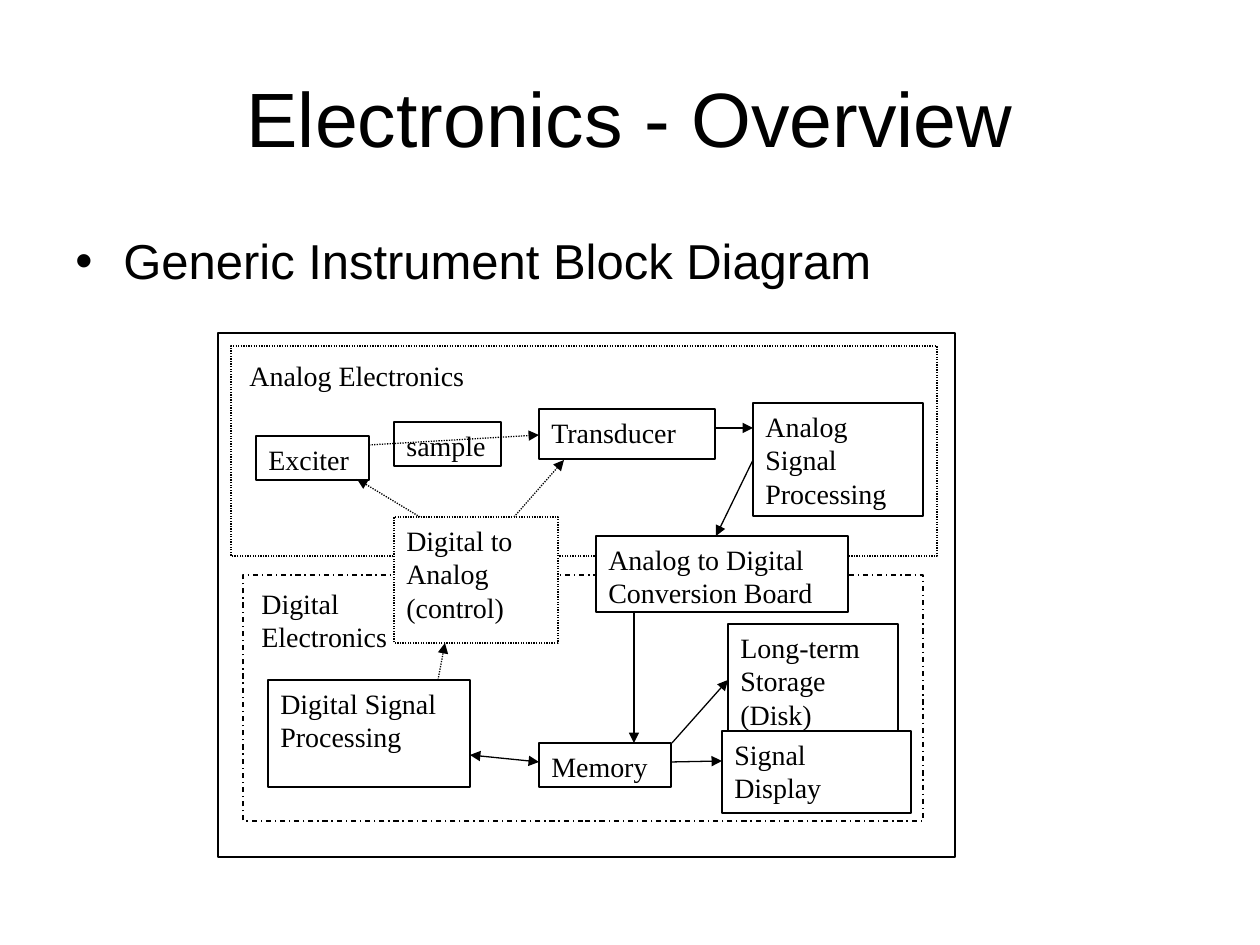
from lxml.etree import SubElement
from pptx import Presentation
from pptx.dml.color import RGBColor
from pptx.enum.dml import MSO_LINE_DASH_STYLE as Dash
from pptx.enum.shapes import MSO_CONNECTOR, MSO_SHAPE
from pptx.enum.text import MSO_ANCHOR, PP_ALIGN
from pptx.oxml.ns import qn
from pptx.util import Emu, Pt

BLACK = RGBColor(0, 0, 0)
WHITE = RGBColor(255, 255, 255)
SOLID, DOTTED, DASH_DOT = Dash.SOLID, Dash.ROUND_DOT, Dash.DASH_DOT

# left, top, width, height, text, outline style (None for no outline)
BLOCKS = [
    (0, 0, 737, 524, "", SOLID),
    (13, 13, 706, 210, "", DOTTED),
    (19, 19, 271, 52, "Analog Electronics", None),
    (321, 76, 176, 50, "Transducer", SOLID),
    (535, 70, 170, 113, "Analog Signal Processing", SOLID),
    (25, 242, 680, 246, "", DASH_DOT),
    (31, 247, 183, 82, "Digital Electronics", None),
    (378, 203, 252, 76, "Analog to Digital Conversion Board", SOLID),
    (321, 410, 132, 44, "Memory", SOLID),
    (504, 398, 189, 82, "Signal Display", SOLID),
    (510, 291, 170, 107, "Long-term Storage (Disk)", SOLID),
    (50, 347, 202, 107, "Digital Signal Processing", SOLID),
    (38, 103, 113, 44, "Exciter", SOLID),
    (176, 89, 107, 44, "sample", SOLID),
    (176, 184, 164, 126, "Digital to Analog (control)", DOTTED),
]

# start x, start y, end x, end y, line style, arrowheads
ARROWS = [
    (498, 95, 535, 95, SOLID, ["tailEnd"]),
    (535, 127, 498, 203, SOLID, ["tailEnd"]),
    (416, 278, 416, 410, SOLID, ["tailEnd"]),
    (454, 410, 510, 347, SOLID, ["tailEnd"]),
    (454, 429, 504, 428, SOLID, ["tailEnd"]),
    (252, 422, 321, 429, SOLID, ["headEnd", "tailEnd"]),
    (151, 112, 321, 102, DOTTED, ["tailEnd"]),
    (220, 347, 227, 310, DOTTED, ["tailEnd"]),
    (202, 184, 139, 146, DOTTED, ["tailEnd"]),
    (296, 184, 346, 127, DOTTED, ["tailEnd"]),
]


def px(length):
    return Emu(round(length * 914400 / 126))


def style_line(line, dash):
    line.color.rgb = BLACK
    line.width = Pt(0.75)
    if dash != SOLID:
        line.dash_style = dash


def write(frame, text, size, font):
    """Put one black paragraph in the frame and return it."""
    frame.word_wrap = True
    para = frame.paragraphs[0]
    para.text = text
    for span in para.runs:
        span.font.size = Pt(size)
        span.font.name = font
        span.font.color.rgb = BLACK
    return para


def add_title(page, left, top, width, height):
    box = page.shapes.add_textbox(px(left), px(top), px(width), px(height))
    box.text_frame.vertical_anchor = MSO_ANCHOR.MIDDLE
    para = write(box.text_frame, "Electronics - Overview", 44, "Arial")
    para.alignment = PP_ALIGN.CENTER


def add_bullet(page, left, top, width, height):
    box = page.shapes.add_textbox(px(left), px(top), px(width), px(height))
    box.text_frame.margin_top = px(11)
    para = write(box.text_frame, "Generic Instrument Block Diagram", 28, "Arial")
    props = para._p.get_or_add_pPr()
    props.set("marL", str(px(48)))
    props.set("indent", str(-px(48)))
    SubElement(props, qn("a:buFont"), typeface="Arial")
    SubElement(props, qn("a:buChar"), char="•")


def add_block(page, left, top, width, height, text, dash):
    block = page.shapes.add_shape(
        MSO_SHAPE.RECTANGLE, px(left), px(top), px(width), px(height))
    block.shadow.inherit = False
    block.fill.solid()
    block.fill.fore_color.rgb = WHITE
    if dash is None:
        block.line.fill.background()
    else:
        style_line(block.line, dash)
    if text:
        block.text_frame.vertical_anchor = MSO_ANCHOR.TOP
        para = write(block.text_frame, text, 16, "Times New Roman")
        para.alignment = PP_ALIGN.LEFT


def add_arrow(page, x1, y1, x2, y2, dash, heads):
    arrow = page.shapes.add_connector(
        MSO_CONNECTOR.STRAIGHT, px(x1), px(y1), px(x2), px(y2))
    style_line(arrow.line, dash)
    outline = arrow.line._get_or_add_ln()
    for head in heads:
        SubElement(outline, qn(f"a:{head}"), type="triangle")
    SubElement(arrow._element.spPr, qn("a:effectLst"))


def add_diagram(page, left, top):
    for x, y, width, height, text, dash in BLOCKS:
        add_block(page, left + x, top + y, width, height, text, dash)
    for x1, y1, x2, y2, dash, heads in ARROWS:
        add_arrow(page, left + x1, top + y1, left + x2, top + y2, dash, heads)


def main():
    deck = Presentation()
    deck.slide_width, deck.slide_height = px(1260), px(945)
    page = deck.slides.add_slide(deck.slide_layouts[6])
    add_title(page, 63, 38, 1134, 158)
    add_bullet(page, 63, 220, 1134, 301)
    add_diagram(page, 218, 333)
    deck.save("out.pptx")


if __name__ == "__main__":
    main()
